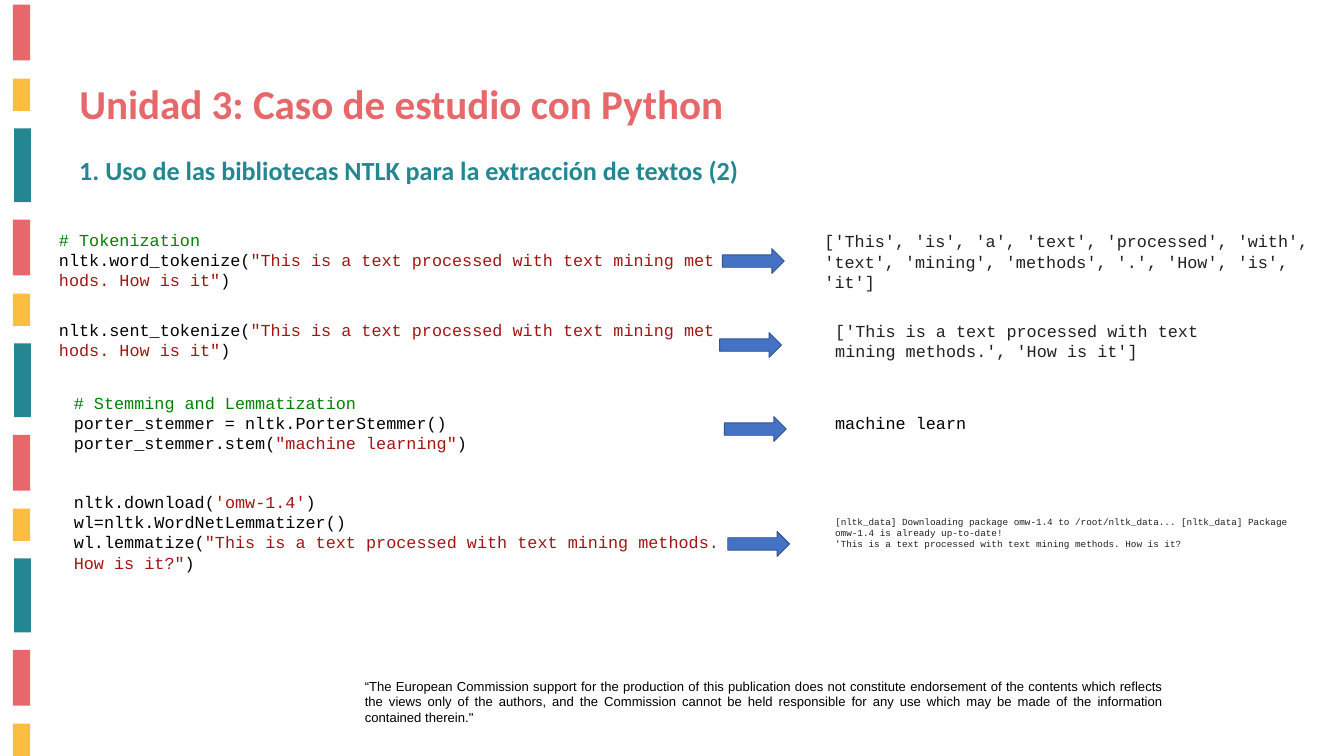
import pptx
import pptx.dml.color
import pptx.enum.shapes
import pptx.enum.text
import pptx.util

PX = pptx.util.Inches(0.01)
CORAL, YELLOW, TEAL = "E8676A", "FDBD40", "238791"
BLACK, GREEN, RED, GRAY = "000000", "008000", "A31515", "212121"
CODE_FONT = "Courier New"
SHAPE = pptx.enum.shapes.MSO_SHAPE
ALIGN = pptx.enum.text.PP_ALIGN
ANCHOR = pptx.enum.text.MSO_ANCHOR


def color(hex_string):
    return pptx.dml.color.RGBColor.from_string(hex_string)


def write(frame, lines, size=18, font=CODE_FONT, bold=False, align=ALIGN.LEFT,
          anchor=ANCHOR.TOP, wrap=True, unbroken=False):
    """Fill a frame with lines, each a list of (text, color) or (text, color, font)."""
    frame.word_wrap = wrap
    frame.auto_size = pptx.enum.text.MSO_AUTO_SIZE.SHAPE_TO_FIT_TEXT
    frame.vertical_anchor = anchor
    for index, line in enumerate(lines):
        para = frame.add_paragraph() if index else frame.paragraphs[0]
        para.alignment = align
        for text, hex_string, *own_font in line:
            span = para.add_run()
            span.text = text.replace(" ", chr(160)) if unbroken else text
            span.font.size = pptx.util.Pt(size)
            span.font.name = own_font[0] if own_font else font
            span.font.bold = bold
            span.font.color.rgb = color(hex_string)


deck = pptx.Presentation()
deck.slide_width, deck.slide_height = 2000 * PX, 1125 * PX
page = deck.slides.add_slide(deck.slide_layouts[5])
shapes = page.shapes

# Striped band on the left edge
for left, first_top, width, height, fill, count in [
    (19, 7, 26, 83, CORAL, 4),
    (19, 117, 26, 48, YELLOW, 4),
    (21, 191, 25, 110, TEAL, 3),
]:
    for step in range(count):
        stripe = shapes.add_shape(SHAPE.RECTANGLE, left * PX, (first_top + 320 * step) * PX,
                                  width * PX, height * PX)
        stripe.shadow.inherit = False
        stripe.fill.solid()
        stripe.fill.fore_color.rgb = color(fill)
        stripe.line.fill.background()

# Title and subtitle
title = shapes.title
title.left, title.top, title.width, title.height = 108 * PX, 112 * PX, 1008 * PX, 84 * PX
write(title.text_frame, [[("Unidad 3: Caso de estudio con Python", "E7686A")]],
      size=44, font="Calibri", bold=True)
subtitle = shapes.add_textbox(108 * PX, 225 * PX, 1558 * PX, 57 * PX)
write(subtitle.text_frame,
      [[("1. Uso de las bibliotecas NTLK para la extracción de textos (2)", TEAL)]],
      size=28, font="Calibri", bold=True)

# Code on the left
sample = '"This is a text processed with text mining methods. How is it"'
for left, top, height, lines in [
    (78, 337, 101, [
        [("# Tokenization", GREEN)],
        [("nltk.word_tokenize(", BLACK), (sample, RED), (")", BLACK)],
    ]),
    (78, 471, 71, [
        [("nltk.sent_tokenize(", BLACK), (sample, RED), (")", BLACK)],
    ]),
    (100, 579, 101, [
        [("# Stemming and Lemmatization", GREEN)],
        [("porter_stemmer = nltk.PorterStemmer()", BLACK)],
        [("porter_stemmer.stem(", BLACK), ('"machine learning"', RED), (")", BLACK)],
    ]),
    (100, 727, 131, [
        [("nltk.download(", BLACK), ("'omw-1.4'", RED), (")", BLACK)],
        [("wl=nltk.WordNetLemmatizer()", BLACK)],
        [("wl.lemmatize(", BLACK),
         ('"This is a text processed with text mining methods. How is it?"', RED),
         (")", BLACK)],
    ]),
]:
    box = shapes.add_textbox(left * PX, top * PX, 1000 * PX, height * PX)
    write(box.text_frame, lines, unbroken=True)

# Arrows from code to output
for left, top in [(1075, 370), (1071, 495), (1078, 620), (1083, 791)]:
    arrow = shapes.add_shape(SHAPE.RIGHT_ARROW, left * PX, top * PX, 92 * PX, 37 * PX)
    arrow.shadow.inherit = False
    arrow.fill.solid()
    arrow.fill.fore_color.rgb = color("4472C4")
    arrow.line.color.rgb = color("325491")
    arrow.line.width = pptx.util.Pt(1)

# Output on the right
for left, top, width, height, wrap, text, hex_string in [
    (1217, 339, 758, 101, True,
     "['This', 'is', 'a', 'text', 'processed', 'with', 'text', 'mining', "
     "'methods', '.', 'How', 'is', 'it']", GRAY),
    (1233, 472, 622, 71, True,
     "['This is a text processed with text mining methods.', 'How is it']", GRAY),
    (1233, 609, 216, 40, False, "machine learn", BLACK),
]:
    box = shapes.add_textbox(left * PX, top * PX, width * PX, height * PX)
    write(box.text_frame, [[(text, hex_string)]], wrap=wrap)

# Download log
log = shapes.add_shape(SHAPE.RECTANGLE, 1233 * PX, 768 * PX, 725 * PX, 50 * PX)
log.shadow.inherit = False
log.fill.solid()
log.fill.fore_color.rgb = color("FFFFFF")
log.line.fill.background()
log.text_frame.margin_top = log.text_frame.margin_bottom = 0
write(log.text_frame, [
    [("[", GRAY, "Noto Sans Mono"),
     ("nltk_data] Downloading package omw-1.4 to /root/nltk_data... "
      "[nltk_data] Package omw-1.4 is already up-to-date!", GRAY)],
    [("'This is a text processed with text mining methods. How is it?", GRAY)],
], size=10, anchor=ANCHOR.MIDDLE)

# Disclaimer
disclaimer = shapes.add_textbox(533 * PX, 1004 * PX, 1208 * PX, 81 * PX)
write(disclaimer.text_frame, [[(
    "“The European Commission support for the production of this publication does not "
    "constitute endorsement of the contents which reflects the views only of the authors, "
    "and the Commission cannot be held responsible for any use which may be made of the "
    'information contained therein."', BLACK)]],
    size=14, font="Arial", align=ALIGN.JUSTIFY)

deck.save("out.pptx")
